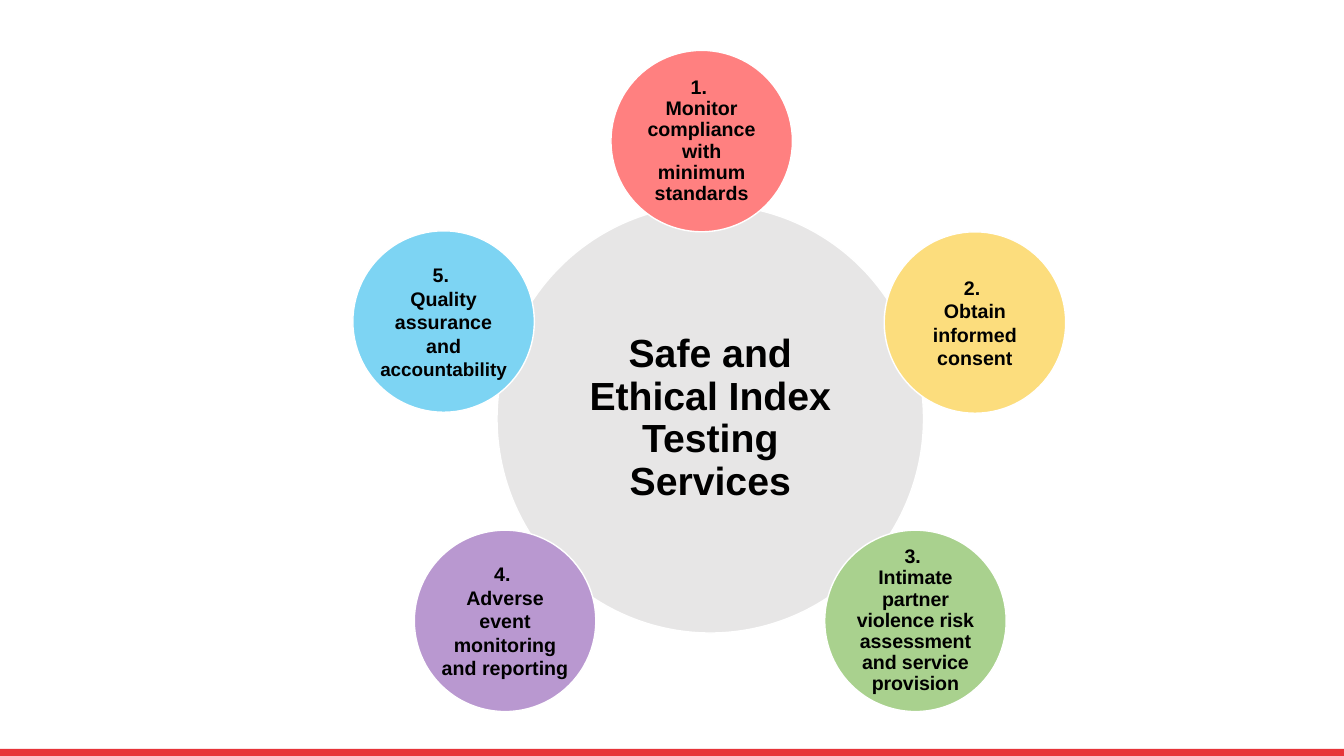
from pptx import Presentation
from pptx.dml.color import RGBColor
from pptx.enum.shapes import MSO_SHAPE
from pptx.enum.text import MSO_ANCHOR, PP_ALIGN
from pptx.util import Inches, Pt

OVAL = MSO_SHAPE.OVAL
RECTANGLE = MSO_SHAPE.RECTANGLE
MIDDLE = MSO_ANCHOR.MIDDLE
CENTER = PP_ALIGN.CENTER

WHITE = RGBColor(0xFF, 0xFF, 0xFF)
BLACK = RGBColor(0x00, 0x00, 0x00)
RED = RGBColor(0xE7, 0x34, 0x39)
GRAY = RGBColor(0xE7, 0xE6, 0xE6)
CORAL = RGBColor(0xFF, 0x80, 0x80)
YELLOW = RGBColor(0xFC, 0xDD, 0x7D)
GREEN = RGBColor(0xA9, 0xD1, 0x8E)
PURPLE = RGBColor(0xB9, 0x98, 0xD0)
BLUE = RGBColor(0x7D, 0xD4, 0xF3)

CELL = Inches(0.1)
STEP_SIZE = 18
LOWER_ROW = 52.6

presentation = Presentation()
presentation.slide_width = Inches(13.33)
presentation.slide_height = Inches(7.5)
slide = presentation.slides.add_slide(presentation.slide_layouts[6])


def add_filled_shape(kind, column, row, columns, rows, color):
    box = [round(cells * CELL) for cells in (column, row, columns, rows)]
    shape = slide.shapes.add_shape(kind, *box)
    shape.shadow.inherit = False
    shape.fill.solid()
    shape.fill.fore_color.rgb = color
    return shape


def add_circle(column, row, columns, rows, color, inset, line_spacing):
    circle = add_filled_shape(OVAL, column, row, columns, rows, color)
    circle.line.color.rgb = WHITE
    circle.line.width = Pt(1)
    frame = circle.text_frame
    frame_format = {
        "word_wrap": True,
        "vertical_anchor": MIDDLE,
        "margin_left": inset * CELL,
        "margin_right": inset * CELL,
        "margin_top": inset * CELL // 2,
        "margin_bottom": inset * CELL // 2,
    }
    for name, value in frame_format.items():
        setattr(frame, name, value)
    paragraph = frame.paragraphs[0]
    paragraph.alignment = CENTER
    paragraph.line_spacing = line_spacing
    font_format = {"name": "Arial", "size": Pt(14), "bold": True}
    for name, value in font_format.items():
        setattr(paragraph.font, name, value)
    paragraph.font.color.rgb = BLACK
    return paragraph


bar = add_filled_shape(RECTANGLE, 0, 74.3, 133.3, 0.8, RED)
bar.line.fill.background()

center = add_circle(49.3, 20.3, 42.3, 42.5, GRAY, 1, 0.9)
center.font.size = Pt(28)
center.add_run().text = "Safe and Ethical Index Testing Services"

steps = [
    (1, 60.6, 5, CORAL, 0, 0.9, 0, [("Monitor compliance with minimum standards", 14)]),
    (3, 81.8, LOWER_ROW, GREEN, 0, 0.9, -0.1,
     [("Intimate partner violence risk assessment and service provision", 14)]),
    (5, 35, 22.9, BLUE, 0, 1, 0, [("Quality assurance and ", 14), ("accountability", 13.5)]),
    (4, 41.1, LOWER_ROW, PURPLE, 0, 1, 0, [("Adverse event monitoring and reporting", 14)]),
    (2, 87.7, 23, YELLOW, 1, 1, 0, [("Obtain informed consent", 14)]),
]

for number, column, row, color, inset, line_spacing, tracking, parts in steps:
    paragraph = add_circle(column, row, STEP_SIZE, STEP_SIZE, color, inset, line_spacing)
    paragraph.add_run().text = f"{number}. "
    paragraph.add_line_break()
    for text, size in parts:
        run = paragraph.add_run()
        run.text = text
        run.font.size = Pt(size)
    if tracking:
        for run in paragraph.runs:
            run._r.get_or_add_rPr().set("spc", str(round(tracking * 100)))

presentation.save("out.pptx")
